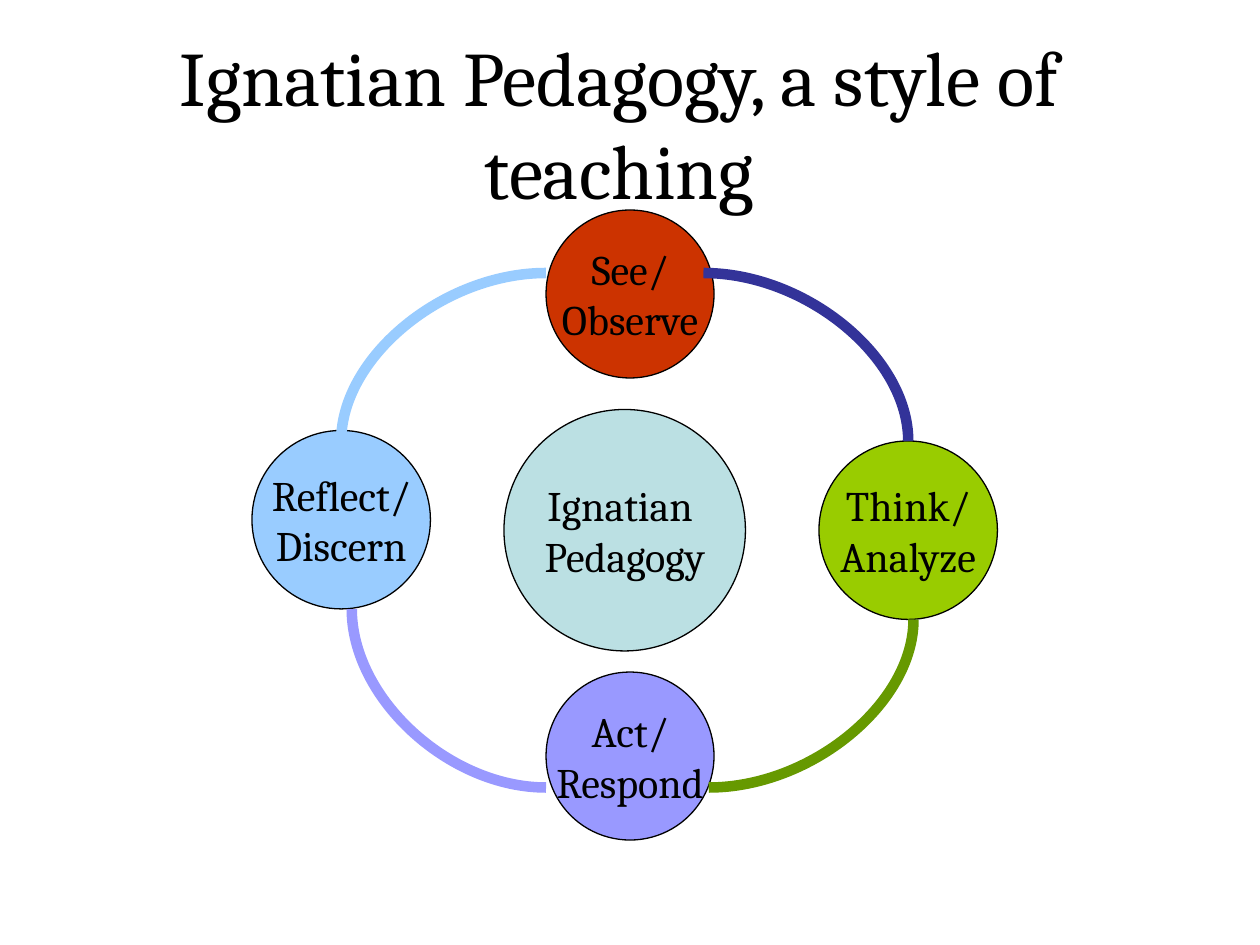
from typing import NamedTuple

from lxml import etree
from pptx import Presentation
from pptx.dml.color import RGBColor
from pptx.enum.shapes import MSO_CONNECTOR, MSO_SHAPE
from pptx.enum.text import MSO_ANCHOR, PP_ALIGN
from pptx.oxml.ns import qn
from pptx.util import Emu, Pt

OVAL = MSO_SHAPE.OVAL
CURVE = MSO_CONNECTOR.CURVE
MIDDLE = MSO_ANCHOR.MIDDLE
CENTER = PP_ALIGN.CENTER

PX = 7620  # 120 px to the inch
FONT = "Cambria"
BLACK = RGBColor(0x00, 0x00, 0x00)
TEAL = RGBColor(0xBB, 0xE0, 0xE3)
RED = RGBColor(0xCC, 0x33, 0x00)
SKY = RGBColor(0x99, 0xCC, 0xFF)
LILAC = RGBColor(0x99, 0x99, 0xFF)
LIME = RGBColor(0x99, 0xCC, 0x00)
NAVY = RGBColor(0x33, 0x33, 0x99)
GREEN = RGBColor(0x66, 0x99, 0x00)


class Circle(NamedTuple):
    text: str
    x: int
    y: int
    size: int
    fill: RGBColor


class Arc(NamedTuple):
    x1: int
    y1: int
    x2: int
    y2: int
    color: RGBColor


CIRCLES = [
    Circle("Ignatian \nPedagogy", 480, 390, 230, TEAL),
    Circle("See/\nObserve", 520, 200, 160, RED),
    Circle("Reflect/\nDiscern", 240, 410, 170, SKY),
    Circle("Act/\nRespond", 520, 640, 160, LILAC),
    Circle("Think/\nAnalyze", 780, 420, 170, LIME),
]

# Clockwise from the top; each arc is turned a further quarter.
ARCS = [
    Arc(670, 260, 865, 420, NAVY),
    Arc(870, 590, 675, 750, GREEN),
    Arc(520, 750, 335, 580, LILAC),
    Arc(325, 420, 520, 260, SKY),
]


def px(n: float) -> Emu:
    return Emu(round(n * PX))


def write(tf, text: str, size: int, wrap: bool) -> None:
    tf.word_wrap = wrap
    tf.vertical_anchor = MIDDLE
    p = tf.paragraphs[0]
    p.text = text
    p.alignment = CENTER
    for r in p.runs:
        r.font.name = FONT
        r.font.size = Pt(size)
        r.font.color.rgb = BLACK


def draw_circle(shapes, c: Circle) -> None:
    sp = shapes.add_shape(OVAL, px(c.x), px(c.y), px(c.size), px(c.size))
    sp.shadow.inherit = False
    sp.fill.solid()
    sp.fill.fore_color.rgb = c.fill
    sp.line.color.rgb = BLACK
    sp.line.width = Pt(0.75)
    write(sp.text_frame, c.text, 24, False)


def draw_arc(shapes, a: Arc, quarters: int) -> None:
    """Draw a quarter curve in its unturned frame, then rotate it about its centre."""
    w, h = abs(a.x2 - a.x1), abs(a.y2 - a.y1)
    if quarters % 2:
        w, h = h, w
    cx, cy = (a.x1 + a.x2) / 2, (a.y1 + a.y2) / 2
    line = shapes.add_connector(
        CURVE, px(cx - w / 2), px(cy - h / 2), px(cx + w / 2), px(cy + h / 2))
    line.line.color.rgb = a.color
    line.line.width = Pt(6)
    sp_pr = line._element.spPr
    sp_pr.find(qn("a:prstGeom")).set("prst", "curvedConnector2")
    if quarters:
        sp_pr.find(qn("a:xfrm")).set("rot", str(quarters * 90 * 60000))
    etree.SubElement(sp_pr, qn("a:effectLst"))


def main() -> None:
    prs = Presentation()
    prs.slide_width, prs.slide_height = px(1200), px(900)
    s = prs.slides.add_slide(prs.slide_layouts[6])
    title = s.shapes.add_textbox(px(80), px(20), px(1020), px(193))
    write(title.text_frame, "Ignatian Pedagogy, a style of teaching", 44, True)
    for circle in CIRCLES:
        draw_circle(s.shapes, circle)
    for quarters, arc in enumerate(ARCS):
        draw_arc(s.shapes, arc, quarters)
    prs.save("out.pptx")


if __name__ == "__main__":
    main()
